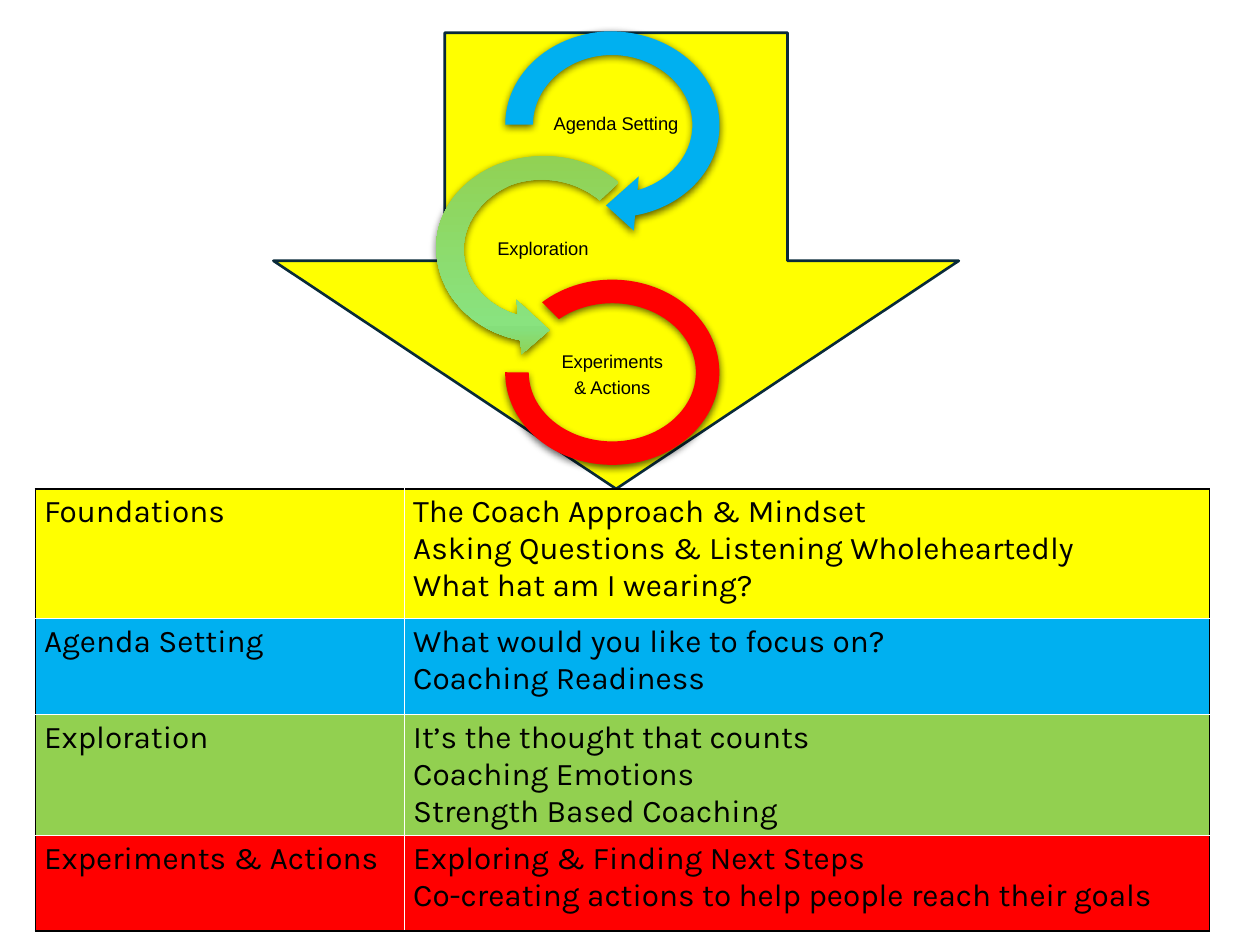
import pptx
import copy
import lxml.etree
import pptx.dml.color
import pptx.enum.shapes
import pptx.enum.text
import pptx.oxml.ns
import pptx.util

Inches = pptx.util.Inches
Pt = pptx.util.Pt
qn = pptx.oxml.ns.qn

COLORS = {
    "yellow": "FFFF00", "blue": "00B0F0", "green": "92D050", "red": "FF0000",
    "navy": "092A39", "black": "000000", "white": "FFFFFF",
}
GREEN_STOPS = [(0, "92D050"), (0.84, "89E37F"), (0.87, "85DF7B"), (1, "92D050")]

# Outlines in inches: a pair is a line to a point, six numbers are a Bezier curve.
AGENDA_BOX = (3.87, 0.13, 1.98, 1.72)
AGENDA_OUTLINE = [
    (4.01, 0.99),
    (4.01, 0.6, 4.35, 0.28, 4.8, 0.25), (5.24, 0.23, 5.64, 0.5, 5.7, 0.88),
    (5.77, 1.27, 5.48, 1.63, 5.04, 1.71),
    (5.03, 1.83), (4.81, 1.63), (5.07, 1.4), (5.06, 1.51),
    (5.37, 1.42, 5.55, 1.15, 5.48, 0.87), (5.41, 0.6, 5.11, 0.41, 4.79, 0.44),
    (4.47, 0.47, 4.23, 0.71, 4.23, 0.99),
]
EXPLORATION_BOX = (3.32, 1.12, 1.98, 1.72)
EXPLORATION_OUTLINE = [
    (4.91, 1.45), (4.76, 1.59),
    (4.57, 1.43, 4.29, 1.38, 4.05, 1.47), (3.82, 1.57, 3.67, 1.78, 3.68, 2),
    (3.69, 2.23, 3.86, 2.43, 4.11, 2.5),
    (4.1, 2.38), (4.36, 2.62), (4.14, 2.81), (4.13, 2.7),
    (3.77, 2.63, 3.51, 2.37, 3.47, 2.06), (3.42, 1.75, 3.61, 1.45, 3.94, 1.31),
    (4.27, 1.18, 4.66, 1.23, 4.91, 1.45),
]

ROWS = [
    ("yellow", 1.03, "Foundations",
     ["The Coach Approach & Mindset", "Asking Questions & Listening Wholeheartedly",
      "What hat am I wearing?"]),
    ("blue", 0.76, "Agenda Setting",
     ["What would you like to focus on?", "Coaching Readiness"]),
    ("green", 0.92, "Exploration",
     ["It’s the thought that counts", "Coaching Emotions", "Strength Based Coaching"]),
    ("red", 0.76, "Experiments & Actions",
     ["Exploring & Finding Next Steps",
      "Co-creating actions to help people reach their goals"]),
]
COLUMN_WIDTHS = [2.93, 6.39]


def rgb(value):
    return pptx.dml.color.RGBColor.from_string(value)


def fill_solid(fill, color):
    fill.solid()
    fill.fore_color.rgb = rgb(COLORS[color])


def fill_gradient(shape, stops):
    shape.fill.gradient()
    shape.fill.gradient_angle = 270
    stop_list = shape._element.spPr.find(".//" + qn("a:gsLst"))
    while len(stop_list) < len(stops):
        stop_list.append(copy.deepcopy(stop_list[0]))
    for stop, (position, color) in zip(shape.fill.gradient_stops, stops):
        stop.position = position
        stop.color.rgb = rgb(color)


def add_soft_shadow(shape):
    shape.shadow.inherit = False
    effects = shape._element.spPr.find(qn("a:effectLst"))
    shadow = lxml.etree.SubElement(
        effects, qn("a:outerShdw"), blurRad=str(Pt(4.5)), dist=str(Pt(1.5)),
        dir="5400000", algn="ctr", rotWithShape="0")
    color = lxml.etree.SubElement(shadow, qn("a:srgbClr"), val=COLORS["black"])
    lxml.etree.SubElement(color, qn("a:alpha"), val="63000")


def add_curved_arrow(slide, box, outline):
    """Add a closed freeform, then give its segments their curves within the box."""
    left, top, width, height = map(Inches, box)
    ends = [(Inches(step[-2]), Inches(step[-1])) for step in outline]
    builder = slide.shapes.build_freeform(*ends[0])
    builder.add_line_segments(ends[1:], close=True)
    shape = builder.convert_to_shape()
    shape.left, shape.top, shape.width, shape.height = left, top, width, height

    geometry = shape._element.spPr.find(".//" + qn("a:path"))
    geometry.set("w", str(width))
    geometry.set("h", str(height))
    for segment, step in zip(list(geometry), outline):
        if len(step) == 6:
            curve = lxml.etree.Element(qn("a:cubicBezTo"))
            geometry.replace(segment, curve)
            segment = curve
        for point in list(segment):
            segment.remove(point)
        for x, y in zip(step[::2], step[1::2]):
            lxml.etree.SubElement(
                segment, qn("a:pt"), x=str(Inches(x) - left), y=str(Inches(y) - top))
    shape.line.fill.background()
    add_soft_shadow(shape)
    return shape


def add_preset(slide, kind, left, top, width, height, color):
    shape = slide.shapes.add_shape(
        kind, Inches(left), Inches(top), Inches(width), Inches(height))
    fill_solid(shape.fill, color)
    shape.shadow.inherit = False
    return shape


def add_label(slide, left, top, lines):
    box = slide.shapes.add_textbox(Inches(left), Inches(top), Inches(1.1), Inches(0.48))
    frame = box.text_frame
    frame.word_wrap = True
    frame.vertical_anchor = pptx.enum.text.MSO_ANCHOR.MIDDLE
    frame.margin_left = frame.margin_right = Inches(0.01)
    frame.margin_top = frame.margin_bottom = Inches(0.01)
    frame.text = "\n".join(lines)
    for index, paragraph in enumerate(frame.paragraphs):
        paragraph.alignment = pptx.enum.text.PP_ALIGN.CENTER
        paragraph.line_spacing = 0.9
        paragraph.space_before = Pt(3.7 if index else 0)
        style_font(paragraph, "Arial", 10.5)


def style_font(paragraph, name, size):
    paragraph.font.name = name
    paragraph.font.size = Pt(size)
    paragraph.font.color.rgb = rgb(COLORS["black"])


def set_borders(cell, borders):
    """Draw 1 pt borders given as (tag, colour) in left, right, top, bottom order."""
    properties = cell._tc.get_or_add_tcPr()
    for index, (tag, color) in enumerate(borders):
        line = lxml.etree.Element(qn(tag), w=str(Pt(1)))
        fill = lxml.etree.SubElement(line, qn("a:solidFill"))
        lxml.etree.SubElement(fill, qn("a:srgbClr"), val=COLORS[color])
        properties.insert(index, line)


def fill_cell(cell, lines, color):
    fill_solid(cell.fill, color)
    cell.margin_left = cell.margin_right = Inches(0.07)
    cell.margin_top, cell.margin_bottom = Inches(0.04), Inches(0.02)
    cell.text = "\n".join(lines)
    for paragraph in cell.text_frame.paragraphs:
        style_font(paragraph, "Karla", 18)


def add_stage_table(slide):
    table = slide.shapes.add_table(
        len(ROWS), len(COLUMN_WIDTHS), Inches(0.28), Inches(3.88),
        Inches(sum(COLUMN_WIDTHS)), Inches(sum(row[1] for row in ROWS))).table
    for column, width in zip(table.columns, COLUMN_WIDTHS):
        column.width = Inches(width)
    last_row, last_column = len(ROWS) - 1, len(COLUMN_WIDTHS) - 1
    for row, (color, height, stage, topics) in enumerate(ROWS):
        table.rows[row].height = Inches(height)
        for column, lines in enumerate([[stage], topics]):
            cell = table.cell(row, column)
            fill_cell(cell, lines, color)
            outer_edges = [("a:lnL", column == 0), ("a:lnR", column == last_column),
                           ("a:lnT", row == 0), ("a:lnB", row == last_row)]
            set_borders(cell, [(tag, "black" if outer else "white")
                               for tag, outer in outer_edges])


def main():
    presentation = pptx.Presentation()
    presentation.slide_width, presentation.slide_height = Inches(10), Inches(7.5)
    slide = presentation.slides.add_slide(presentation.slide_layouts[6])
    kinds = pptx.enum.shapes.MSO_SHAPE

    big_arrow = add_preset(slide, kinds.DOWN_ARROW, 2.17, 0.26, 5.44, 3.62, "yellow")
    big_arrow.line.color.rgb = rgb(COLORS["navy"])
    big_arrow.line.width = Pt(1.5)

    agenda_arrow = add_curved_arrow(slide, AGENDA_BOX, AGENDA_OUTLINE)
    fill_solid(agenda_arrow.fill, "blue")
    add_label(slide, 4.34, 0.75, ["Agenda Setting"])

    exploration_arrow = add_curved_arrow(slide, EXPLORATION_BOX, EXPLORATION_OUTLINE)
    fill_gradient(exploration_arrow, GREEN_STOPS)
    add_label(slide, 3.76, 1.74, ["Exploration"])

    actions_arc = add_preset(slide, kinds.BLOCK_ARC, 4.01, 2.22, 1.7, 1.47, "red")
    for index, value in enumerate([135, 108, 0.127]):
        actions_arc.adjustments[index] = value
    actions_arc.line.fill.background()
    add_soft_shadow(actions_arc)
    add_label(slide, 4.31, 2.74, ["Experiments", "& Actions"])

    add_stage_table(slide)
    presentation.save("out.pptx")


if __name__ == "__main__":
    main()
